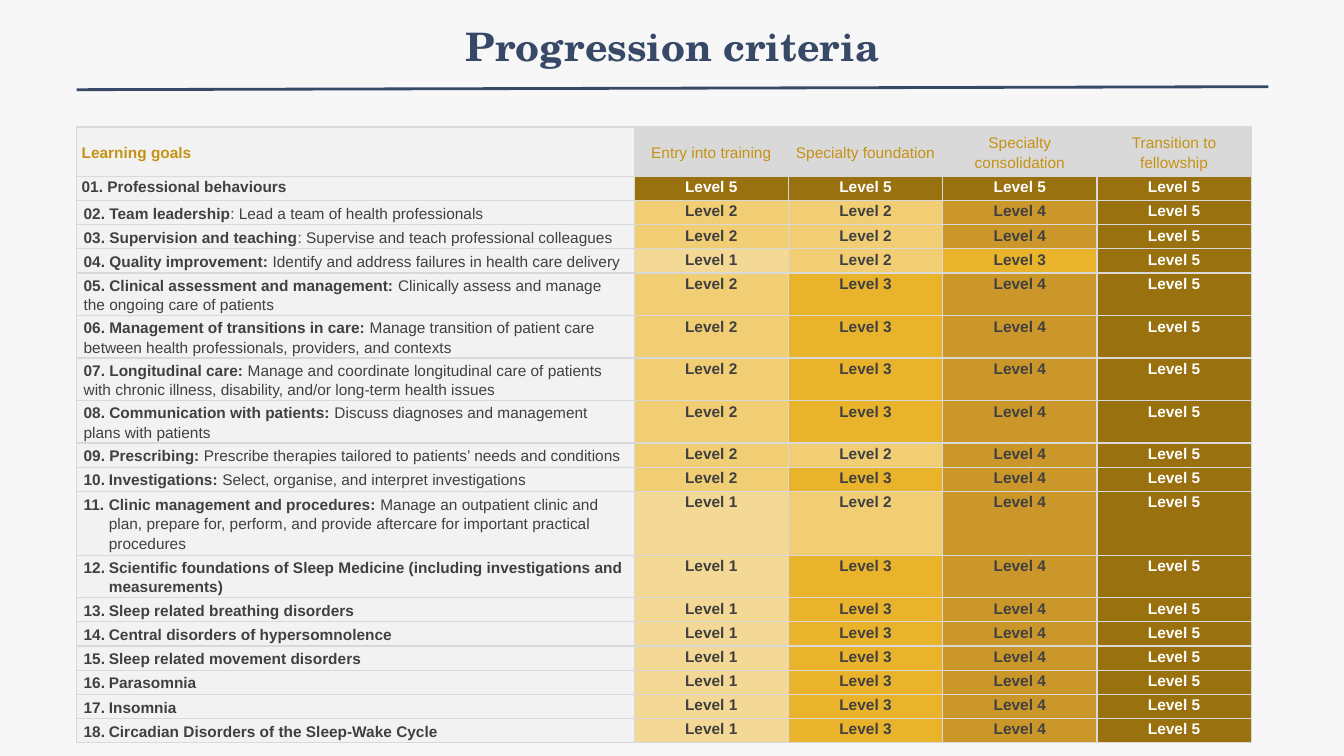
from lxml.etree import SubElement
from pptx import Presentation
from pptx.dml.color import RGBColor
from pptx.enum.shapes import MSO_CONNECTOR
from pptx.enum.text import MSO_ANCHOR, PP_ALIGN
from pptx.oxml.ns import qn
from pptx.util import Inches, Pt

COLORS = {
    "background": "F7F7F7", "navy": "384967", "gold": "C69214", "text": "404040",
    "white": "FFFFFF", "goal": "F2F2F2", "header": "D9D9D9", "border": "D9D9D9",
}
LEVEL_FILLS = {1: "F4D895", 2: "F1CD73", 3: "E9B32B", 4: "CB972B", 5: "99720F"}
STAGES = ["Entry into training", "Specialty foundation",
          "Specialty consolidation", "Transition to fellowship"]
FIRST_AUTO_NUMBER = 10
GOALS = [
    ("01. Professional behaviours", "", (5, 5, 5, 5)),
    ("02. Team leadership", ": Lead a team of health professionals", (2, 2, 4, 5)),
    ("03. Supervision and teaching",
     ": Supervise and teach professional colleagues", (2, 2, 4, 5)),
    ("04. Quality improvement:",
     " Identify and address failures in health care delivery", (1, 2, 3, 5)),
    ("05. Clinical assessment and management: ",
     "Clinically assess and manage the ongoing care of patients", (2, 3, 4, 5)),
    ("06. Management of transitions in care: ",
     "Manage transition of patient care between health professionals, "
     "providers, and contexts", (2, 3, 4, 5)),
    ("07. Longitudinal care: ",
     "Manage and coordinate longitudinal care of patients with chronic illness, "
     "disability, and/or long-term health issues", (2, 3, 4, 5)),
    ("08. Communication with patients: ",
     "Discuss diagnoses and management plans with patients", (2, 3, 4, 5)),
    ("09. Prescribing: ",
     "Prescribe therapies tailored to patients’ needs and conditions", (2, 2, 4, 5)),
    ("Investigations: ", "Select, organise, and interpret investigations", (2, 3, 4, 5)),
    ("Clinic management and procedures: ",
     "Manage an outpatient clinic and plan, prepare for, perform, and provide "
     "aftercare for important practical procedures", (1, 2, 4, 5)),
    ("Scientific foundations of Sleep Medicine (including investigations and "
     "measurements)", "", (1, 3, 4, 5)),
    ("Sleep related breathing disorders", "", (1, 3, 4, 5)),
    ("Central disorders of hypersomnolence", "", (1, 3, 4, 5)),
    ("Sleep related movement disorders", "", (1, 3, 4, 5)),
    ("Parasomnia", "", (1, 3, 4, 5)),
    ("Insomnia", "", (1, 3, 4, 5)),
    ("Circadian Disorders of the Sleep-Wake Cycle", "", (1, 3, 4, 5)),
]


def rgb(name):
    """Return the colour for a palette name."""
    return RGBColor.from_string(COLORS[name])


def set_attributes(target, values):
    """Set every attribute named in a dict of format values."""
    for name, value in values.items():
        setattr(target, name, value)


def add_run(paragraph, text, color, **values):
    """Add a run with its font colour and format values."""
    run = paragraph.add_run()
    run.text = text
    set_attributes(run.font, {"name": "Arial", "size": Pt(11), **values})
    run.font.color.rgb = rgb(color)


def add_title(slide, text, left, top, width, height):
    """Place the centred slide title in its box."""
    frame = slide.shapes.add_textbox(left, top, width, height).text_frame
    frame.word_wrap = True
    paragraph = frame.paragraphs[0]
    paragraph.alignment = PP_ALIGN.CENTER
    add_run(paragraph, text, "navy", name="TeX Gyre Schola", size=Pt(28), bold=True)


def add_rule(slide, left, top, width, rise):
    """Draw the slightly rising line below the title."""
    rule = slide.shapes.add_connector(
        MSO_CONNECTOR.STRAIGHT, left, top, left + width, top - rise)
    rule.line.color.rgb = rgb("navy")
    rule.line.width = Pt(2)
    SubElement(rule._element.spPr, qn("a:effectLst"))


def format_cell(cell, fill, margin, anchor, alignment, space_after=2):
    """Set borders, fill and text layout of a cell and return its paragraph."""
    properties = cell._tc.get_or_add_tcPr()
    for side in ("lnL", "lnR", "lnT", "lnB"):
        line = SubElement(properties, qn(f"a:{side}"), w=str(Pt(1)))
        solid = SubElement(line, qn("a:solidFill"))
        SubElement(solid, qn("a:srgbClr"), val=COLORS["border"])
    cell.fill.solid()
    cell.fill.fore_color.rgb = RGBColor.from_string(fill)
    set_attributes(cell, {
        "margin_left": Inches(margin), "margin_right": Inches(margin),
        "margin_top": 0, "margin_bottom": 0, "vertical_anchor": anchor})
    paragraph = cell.text_frame.paragraphs[0]
    set_attributes(paragraph, {
        "alignment": alignment, "line_spacing": 1.15, "space_after": Pt(space_after)})
    return paragraph


def number_paragraph(paragraph, number):
    """Give a paragraph a hanging automatic number."""
    properties = paragraph._p.get_or_add_pPr()
    properties.set("marL", str(Inches(0.25)))
    properties.set("indent", str(-Inches(0.25)))
    SubElement(properties, qn("a:buFont"), typeface="+mj-lt")
    SubElement(properties, qn("a:buAutoNum"), type="arabicPeriod", startAt=str(number))


def fill_header(cells):
    """Write the heading row."""
    for column, text in enumerate(["Learning goals", *STAGES]):
        is_goal = column == 0
        paragraph = format_cell(
            cells[column], COLORS["goal" if is_goal else "header"], 0.05,
            MSO_ANCHOR.MIDDLE, PP_ALIGN.LEFT if is_goal else PP_ALIGN.CENTER, 4)
        add_run(paragraph, text, "gold", bold=is_goal)


def fill_goal(cells, number, name, detail, levels):
    """Write one learning goal and its level at each stage."""
    is_first = number == 1
    paragraph = format_cell(
        cells[0], COLORS["goal"], 0.05 if is_first else 0.07,
        MSO_ANCHOR.TOP if is_first else MSO_ANCHOR.MIDDLE, PP_ALIGN.LEFT)
    if number >= FIRST_AUTO_NUMBER:
        number_paragraph(paragraph, number)
    add_run(paragraph, name, "text", bold=True)
    if detail:
        add_run(paragraph, detail, "text", bold=False)
    for cell, level in zip(cells[1:], levels):
        paragraph = format_cell(
            cell, LEVEL_FILLS[level], 0.05, MSO_ANCHOR.TOP, PP_ALIGN.CENTER)
        add_run(paragraph, f"Level {level}", "white" if level == 5 else "text", bold=True)


def add_criteria_table(slide, left, top, width, height):
    """Place the table of learning goals and levels in its box."""
    table = slide.shapes.add_table(
        len(GOALS) + 1, len(STAGES) + 1, left, top, width, height).table
    set_attributes(table, {"first_row": False, "horz_banding": False})
    stage_width = Inches(1.53)
    for column in table.columns:
        column.width = stage_width
    table.columns[0].width = width - stage_width * len(STAGES)
    for row in table.rows:
        row.height = Inches(0.24)
    table.rows[0].height = Inches(0.49)
    rows = [list(row.cells) for row in table.rows]
    fill_header(rows[0])
    for number, goal in enumerate(GOALS, 1):
        fill_goal(rows[number], number, *goal)


def main():
    """Build and save the presentation."""
    presentation = Presentation()
    set_attributes(presentation, {
        "slide_width": Inches(13.33), "slide_height": Inches(7.5)})
    slide = presentation.slides.add_slide(presentation.slide_layouts[6])
    slide.background.fill.solid()
    slide.background.fill.fore_color.rgb = rgb("background")
    left = Inches(0.76)
    add_title(slide, "Progression criteria",
              Inches(2.17), Inches(0.17), Inches(9), Inches(1.25))
    add_rule(slide, left, Inches(0.89), Inches(11.82), Inches(0.03))
    add_criteria_table(slide, left, Inches(1.26), Inches(11.65), Inches(5.96))
    presentation.save("out.pptx")


if __name__ == "__main__":
    main()
